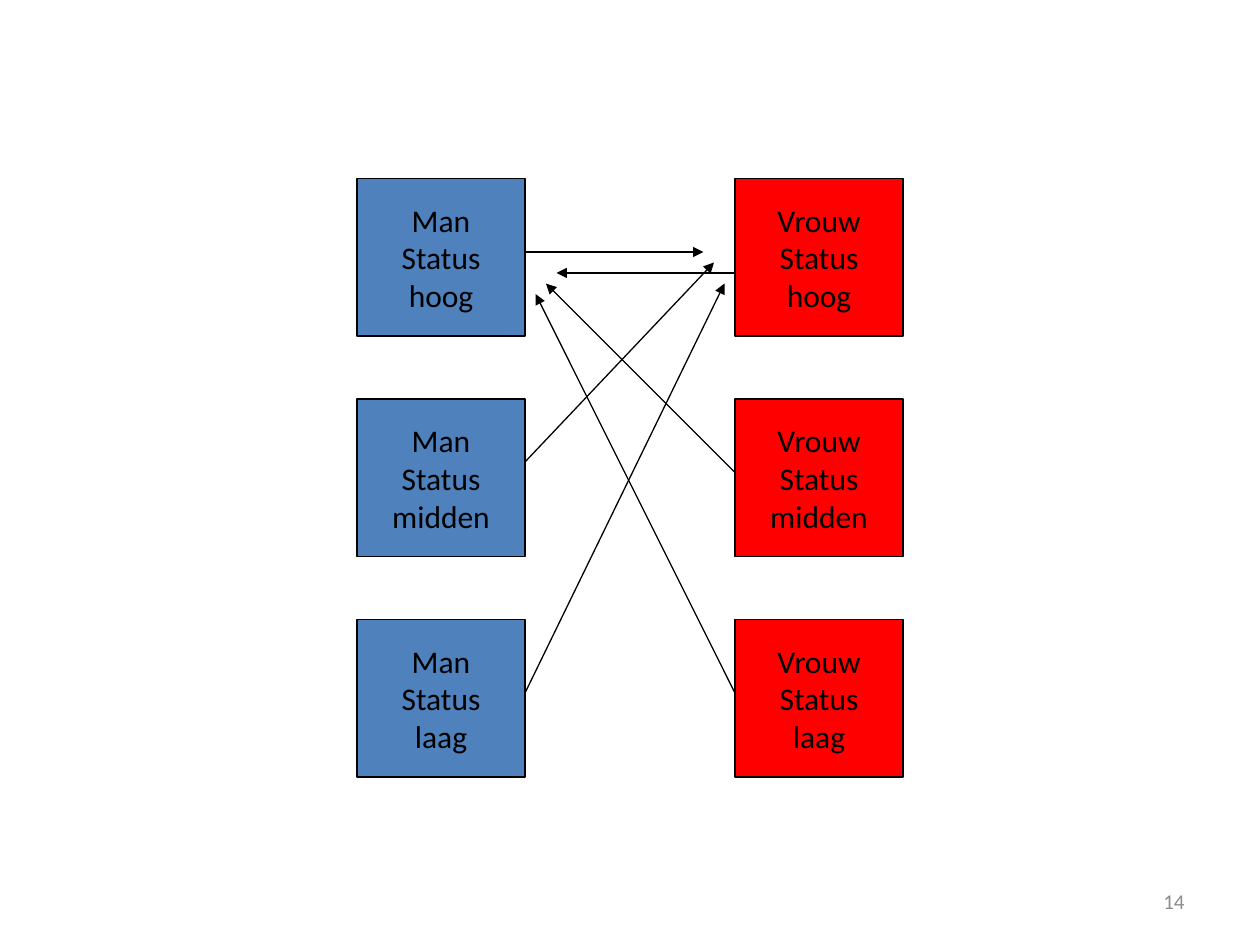
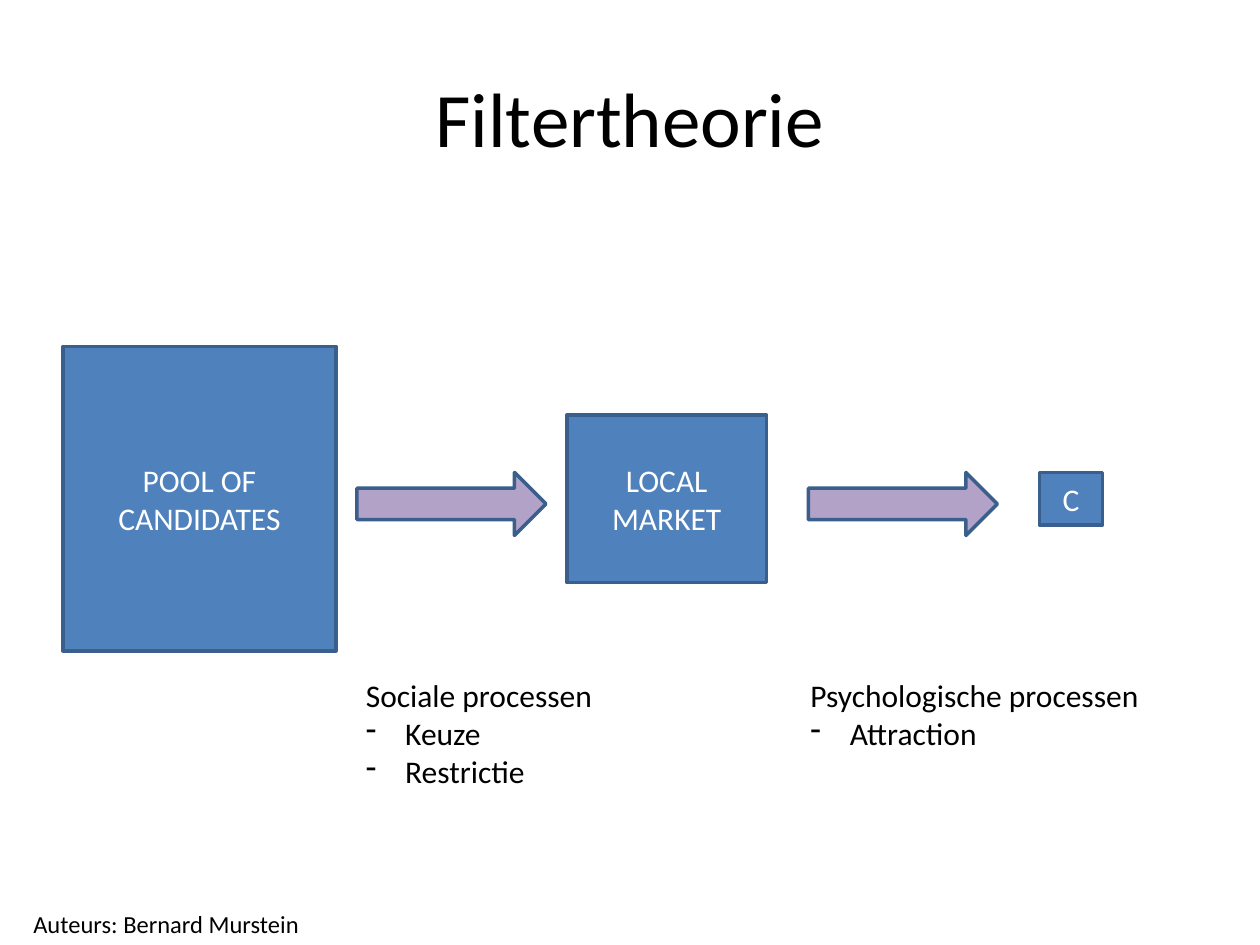
from pptx import Presentation
from pptx import util as u
from pptx.dml.color import RGBColor
from pptx.enum import shapes, text
from pptx.oxml.ns import qn
from lxml import etree

Pt = u.Pt
FONT = "Calibri"
BLACK = RGBColor(0x00, 0x00, 0x00)
WHITE = RGBColor(0xFF, 0xFF, 0xFF)
GRAY = RGBColor(0x8C, 0x8C, 0x8C)
BLUE = RGBColor(0x4F, 0x81, 0xBD)
DARK_BLUE = RGBColor(0x3A, 0x5F, 0x8C)
RED = RGBColor(0xFF, 0x00, 0x00)
PURPLE = RGBColor(0xB3, 0xA2, 0xC7)

LEFT, CENTER, RIGHT = text.PP_ALIGN.LEFT, text.PP_ALIGN.CENTER, text.PP_ALIGN.RIGHT
TITLE_ONLY, BLANK = 5, 6


def add_dash(paragraph):
    """Give a paragraph a hanging dash."""
    properties = paragraph._p.get_or_add_pPr()
    properties.set("marL", str(Pt(22.5)))
    properties.set("indent", str(-Pt(22.5)))
    etree.SubElement(properties, qn("a:buChar")).set("char", "-")


def write(frame, lines, size=18, color=BLACK, align=LEFT):
    """Fill a text frame; lines that start with '- ' become dash items."""
    for index, line in enumerate(lines):
        paragraph = frame.paragraphs[0] if index == 0 else frame.add_paragraph()
        paragraph.text = line.removeprefix("- ")
        paragraph.alignment = align
        if line.startswith("- "):
            add_dash(paragraph)
        font = paragraph.font
        font.name, font.size, font.color.rgb = FONT, Pt(size), color


def add_text(page, place, lines, anchor=text.MSO_ANCHOR.TOP, **style):
    box = page.shapes.add_textbox(*map(Pt, place))
    box.text_frame.word_wrap = True
    box.text_frame.vertical_anchor = anchor
    write(box.text_frame, lines, **style)


def add_block(page, kind, place, fill, line, width):
    block = page.shapes.add_shape(kind, *map(Pt, place))
    block.shadow.inherit = False
    block.fill.solid()
    block.fill.fore_color.rgb = fill
    block.line.color.rgb = line
    block.line.width = Pt(width)
    return block


def add_box(page, place, lines, fill, line, width, color, wrap=True):
    box = add_block(page, shapes.MSO_SHAPE.RECTANGLE, place, fill, line, width)
    box.text_frame.word_wrap = wrap
    box.text_frame.vertical_anchor = text.MSO_ANCHOR.MIDDLE
    write(box.text_frame, lines, color=color, align=CENTER)


def add_arrow(page, start, end):
    arrow = page.shapes.add_connector(
        shapes.MSO_CONNECTOR.STRAIGHT, *map(Pt, start + end))
    arrow.line.color.rgb = BLACK
    arrow.line.width = Pt(0.75)
    etree.SubElement(arrow.line._get_or_add_ln(), qn("a:tailEnd")).set("type", "triangle")
    etree.SubElement(arrow._element.spPr, qn("a:effectLst"))


def build_status_slide(deck):
    page = deck.slides.add_slide(deck.slide_layouts[BLANK])

    # One column per sex, one row per status
    for person, left, fill in (("Man", 204, BLUE), ("Vrouw", 420, RED)):
        for row, status in enumerate(("hoog", "midden", "laag")):
            add_box(page, (left, 102 + 126 * row, 96, 90),
                    (person, "Status", status), fill, BLACK, 0.75, BLACK, wrap=False)

    # Every status aims at the highest one across
    man_edge, woman_edge = 300, 420
    for start_y, end in ((396, (414, 162)), (264, (408, 150)), (144, (402, 144))):
        add_arrow(page, (man_edge, start_y), end)
    for start_y, end in ((396, (306, 168)), (270, (312, 162)), (156, (318, 156))):
        add_arrow(page, (woman_edge, start_y), end)

    # Page number
    add_text(page, (516, 500.5, 168, 28.75), ("14",), text.MSO_ANCHOR.MIDDLE,
             size=12, color=GRAY, align=RIGHT)


def build_filter_slide(deck):
    page = deck.slides.add_slide(deck.slide_layouts[TITLE_ONLY])
    title = page.shapes.title
    title.left, title.top, title.width, title.height = map(Pt, (36, 21.6, 648, 90))
    title.text_frame.vertical_anchor = text.MSO_ANCHOR.MIDDLE
    write(title.text_frame, ("Filtertheorie",), size=44, align=CENTER)

    add_text(page, (12, 516, 426, 24.25), ("Auteurs: Bernard Murstein",), size=14)

    # Shrinking groups of candidates
    for label, place in (("C", (594, 270, 36, 30)),
                         ("LOCAL MARKET", (324, 237, 114, 96)),
                         ("POOL OF CANDIDATES", (36, 198, 156, 174))):
        add_box(page, place, (label,), BLUE, DARK_BLUE, 2, WHITE)

    # Filters between the groups
    for left in (204, 462):
        add_block(page, shapes.MSO_SHAPE.RIGHT_ARROW, (left, 270, 108, 36),
                  PURPLE, DARK_BLUE, 2)

    # Processes behind each filter
    add_text(page, (202, 383, 180, 72.7),
             ("Sociale processen", "- Keuze", "- Restrictie"))
    add_text(page, (456, 383, 204, 72.7),
             ("Psychologische processen", "- Attraction"))


def main():
    deck = Presentation()
    deck.slide_width, deck.slide_height = Pt(720), Pt(540)
    build_status_slide(deck)
    build_filter_slide(deck)
    deck.save("out.pptx")


if __name__ == "__main__":
    main()
